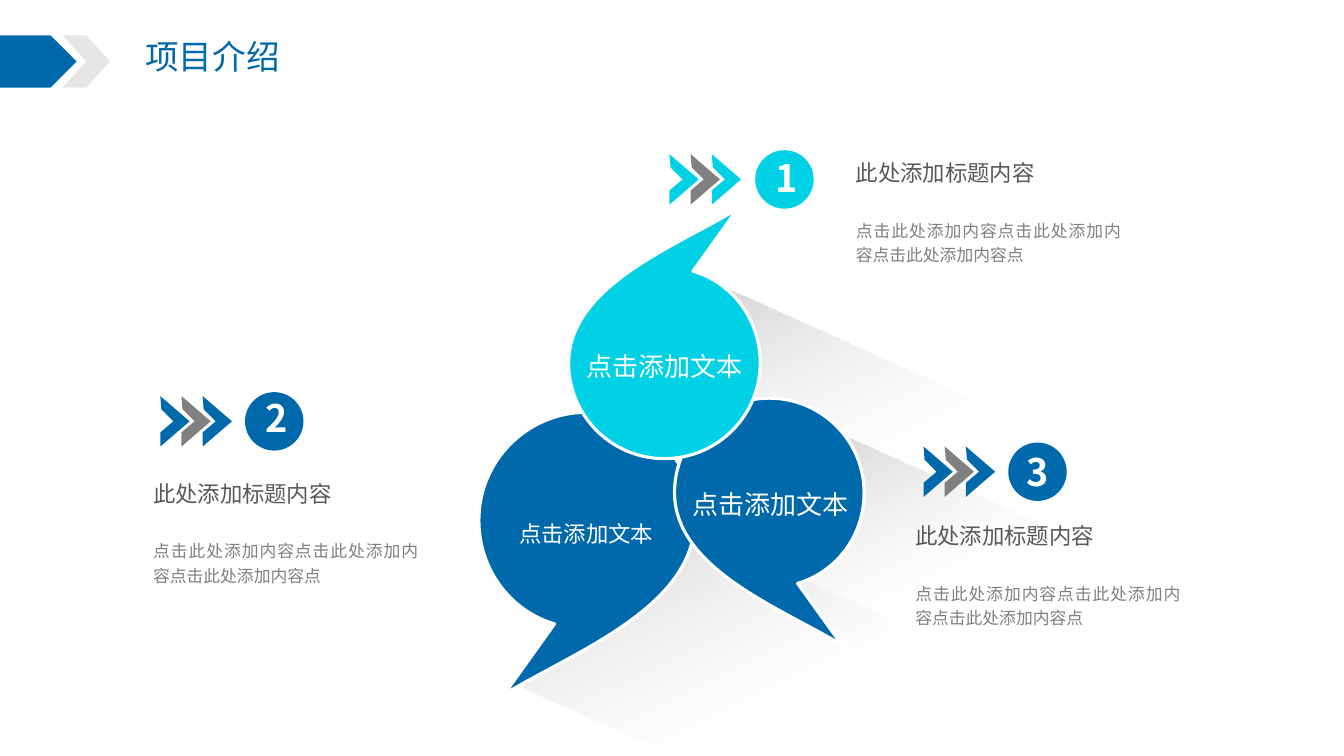
from dataclasses import dataclass

from lxml import etree
from pptx import Presentation
from pptx import util as u
from pptx.dml.color import RGBColor
from pptx.enum import shapes, text
from pptx.oxml.ns import qn

PX = 9144  # 100 px to the inch
FONT = "Noto Sans CJK SC"
BLUE, CYAN, WHITE = "0069AC", "00D1E5", "FFFFFF"
GREY, PALE, DARK = "808080", "E7E6E6", "595959"
CHEVRON = [(1, 13), (0, 0), (29, 25), (0, 50), (0, 36), (13, 25)]
CHEVRON_PITCH = 21
BUBBLE_WIDTH, BUBBLE_HEIGHT = 214, 280
BUBBLE_START = (107, 0)
# Each cubic curve: two control points and an end point
BUBBLE_CURVES = [
    [(48, 0), (0, 48), (0, 107)],
    [(0, 156), (31, 197), (75, 210)],
    [(25, 280), (25, 280), (25, 280)],
    [(89, 240), (214, 195), (214, 107)],
    [(214, 48), (166, 0), (107, 0)],
]
# Colour, position and opacity, in thousandths of a percent
SHADOW_STOPS = [("23A9FF", 0, 54000), ("BFBFBF", 0, 100000), (WHITE, 54000, 0)]
Point = tuple[float, float]
Box = tuple[int, int, int, int]


@dataclass
class Step:
    number: str
    color: str
    marker: tuple[int, int]
    circle: tuple[int, int]
    digit: tuple[int, int]
    heading: tuple[int, int]


@dataclass
class Bubble:
    color: str
    box: Box
    flip_x: bool
    flip_y: bool
    label: Box
    size: float


SHADOWS: list[Box] = [(764, 493, 377, 180), (538, 591, 543, 212), (623, 373, 543, 181)]
STEPS = [
    Step("1", CYAN, (664, 153), (749, 149), (740, 149), (839, 153)),
    Step("2", BLUE, (159, 393), (243, 389), (234, 387), (142, 471)),
    Step("3", BLUE, (916, 443), (1000, 439), (989, 440), (898, 513)),
]
BUBBLES = [
    Bubble(BLUE, (475, 409, 214, 280), False, False, (504, 498, 155, 50), 16),
    Bubble(BLUE, (669, 395, 188, 245), True, False, (676, 464, 177, 57), 18.6),
    Bubble(CYAN, (564, 207, 190, 248), True, True, (571, 327, 177, 57), 18.6),
]


def rgb(color: str) -> RGBColor:
    return RGBColor.from_string(color)


def emu(box: Box) -> list[int]:
    return [v * PX for v in box]


def paint(sp, color: str, outline: str | None = None) -> None:
    sp.shadow.inherit = False
    sp.fill.solid()
    sp.fill.fore_color.rgb = rgb(color)
    if outline:
        sp.line.color.rgb = rgb(outline)
        sp.line.width = u.Pt(2.25)
    else:
        sp.line.fill.background()


def write(sp, words: str, size: float, color: str, align=text.PP_ALIGN.LEFT,
          spacing: float = 1.0, wrap: bool = False, bold: bool = False) -> None:
    tf = sp.text_frame
    tf.text = words
    tf.word_wrap = wrap
    tf.vertical_anchor = text.MSO_ANCHOR.TOP
    p = tf.paragraphs[0]
    p.alignment = align
    p.line_spacing = spacing
    font = p.runs[0].font
    font.name, font.size, font.bold = FONT, u.Pt(size), bold
    font.color.rgb = rgb(color)
    ea = etree.SubElement(p.runs[0]._r.get_or_add_rPr(), qn("a:ea"))
    ea.set("typeface", FONT)


def add_outline(group, points: list[Point]):
    scaled = [(x * PX, y * PX) for x, y in points]
    builder = group.shapes.build_freeform(*scaled[0])
    builder.add_line_segments(scaled[1:], close=True)
    return builder.convert_to_shape()


def bend(sp, curves: list[list[Point]]) -> None:
    """Turn the straight segments of a freeform into cubic curves."""
    for line, curve in zip(list(sp._element.iter(qn("a:lnTo"))), curves):
        cubic = etree.Element(qn("a:cubicBezTo"))
        for x, y in curve:
            etree.SubElement(cubic, qn("a:pt"), x=str(round(x * PX - sp.left)),
                             y=str(round(y * PX - sp.top)))
        line.getparent().replace(line, cubic)


def add_header(slide) -> None:
    title = slide.shapes.title
    title.left, title.top, title.width, title.height = emu((134, 31, 155, 50))
    write(title, "项目介绍", 24, BLUE)
    title.text_frame.auto_size = text.MSO_AUTO_SIZE.NONE
    for kind, box, color in [
        (shapes.MSO_SHAPE.PENTAGON, (0, 35, 76, 52), BLUE),
        (shapes.MSO_SHAPE.CHEVRON, (62, 35, 47, 52), PALE),
    ]:
        sp = slide.shapes.add_shape(kind, *emu(box))
        sp.adjustments[0] = 0.5
        paint(sp, color)


def add_long_shadow(slide, box: Box) -> None:
    sp = slide.shapes.add_shape(shapes.MSO_SHAPE.RECTANGLE, *emu(box))
    sp.rotation = 24.2
    sp.shadow.inherit = False
    sp.line.fill.background()
    sp.fill.gradient()
    sp.fill.gradient_angle = 320
    stops = sp._element.spPr.find(qn("a:gradFill")).find(qn("a:gsLst"))
    for stop in list(stops):
        stops.remove(stop)
    for color, position, opacity in SHADOW_STOPS:
        stop = etree.SubElement(stops, qn("a:gs"), pos=str(position))
        value = etree.SubElement(stop, qn("a:srgbClr"), val=color)
        etree.SubElement(value, qn("a:alpha"), val=str(opacity))


def add_marker(slide, step: Step) -> None:
    group = slide.shapes.add_group_shape()
    left, top = step.marker
    for i, color in enumerate([step.color, GREY, step.color]):
        x0 = left + i * CHEVRON_PITCH
        paint(add_outline(group, [(x0 + x, top + y) for x, y in CHEVRON]), color)
    circle = emu((*step.circle, 58, 58))
    paint(group.shapes.add_shape(shapes.MSO_SHAPE.OVAL, *circle), step.color)
    digit = group.shapes.add_textbox(*emu((*step.digit, 80, 56)))
    write(digit, step.number, 27, WHITE, text.PP_ALIGN.CENTER, wrap=True, bold=True)


def add_description(slide, step: Step) -> None:
    group = slide.shapes.add_group_shape()
    x, y = step.heading
    body = group.shapes.add_textbox(*emu((x, y + 57, 283, 59)))
    write(body, "点击此处添加内容点击此处添加内容点击此处添加内容点", 12, GREY,
          text.PP_ALIGN.JUSTIFY, 1.2, wrap=True)
    heading = group.shapes.add_textbox(*emu((x, y, 200, 37)))
    write(heading, "此处添加标题内容", 16, DARK)


def add_bubble(slide, bubble: Bubble) -> None:
    left, top, width, height = bubble.box

    def place(point: Point) -> Point:
        fx, fy = point[0] / BUBBLE_WIDTH, point[1] / BUBBLE_HEIGHT
        return (left + width * (1 - fx if bubble.flip_x else fx),
                top + height * (1 - fy if bubble.flip_y else fy))

    group = slide.shapes.add_group_shape()
    curves = [[place(point) for point in curve] for curve in BUBBLE_CURVES]
    sp = add_outline(group, [place(BUBBLE_START)] + [curve[-1] for curve in curves])
    bend(sp, curves)
    paint(sp, bubble.color, WHITE)
    label = group.shapes.add_textbox(*emu(bubble.label))
    write(label, "点击添加文本", bubble.size, WHITE, text.PP_ALIGN.CENTER, 1.5)


def main() -> None:
    prs = Presentation()
    prs.slide_width, prs.slide_height = 1333 * PX, 750 * PX
    slide = prs.slides.add_slide(prs.slide_layouts[5])
    add_header(slide)
    for box in SHADOWS:
        add_long_shadow(slide, box)
    for step in STEPS:
        add_marker(slide, step)
    *lower_bubbles, top_bubble = BUBBLES
    for bubble in lower_bubbles:
        add_bubble(slide, bubble)
    for step in STEPS:
        add_description(slide, step)
    add_bubble(slide, top_bubble)
    prs.save("out.pptx")


if __name__ == "__main__":
    main()
